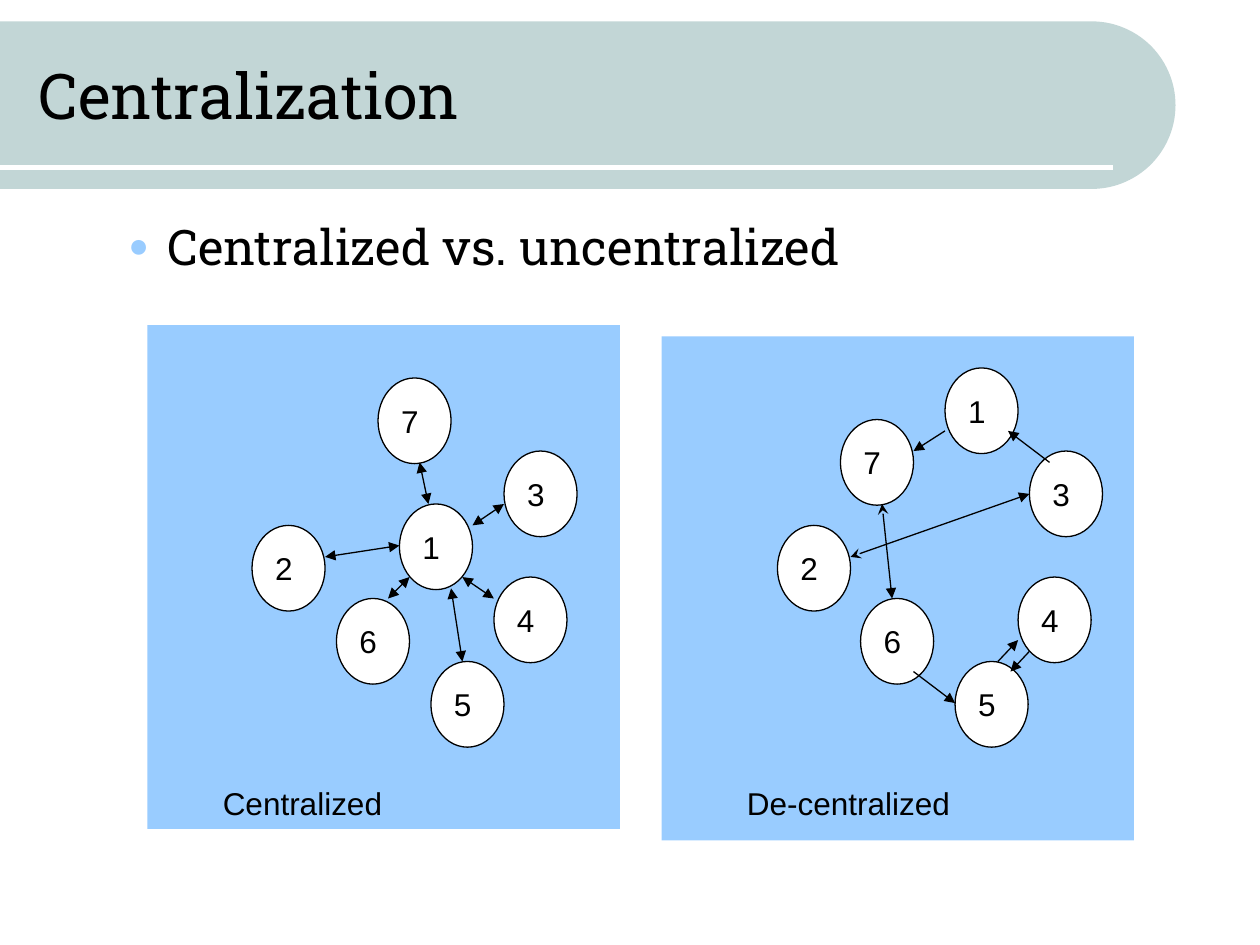
import math

from lxml import etree
from pptx import Presentation
from pptx.dml.color import RGBColor
from pptx.enum.shapes import MSO_CONNECTOR, MSO_SHAPE
from pptx.enum.text import MSO_ANCHOR, PP_ALIGN
from pptx.oxml.ns import qn
from pptx.util import Inches, Pt

RECTANGLE = MSO_SHAPE.RECTANGLE
OVAL = MSO_SHAPE.OVAL
STRAIGHT = MSO_CONNECTOR.STRAIGHT
LEFT = PP_ALIGN.LEFT
TOP, MIDDLE = MSO_ANCHOR.TOP, MSO_ANCHOR.MIDDLE

COLORS = {"band": "C2D6D6", "panel": "99CCFF", "white": "FFFFFF", "black": "000000"}
HEADING_FONT, LABEL_FONT = "Roboto Slab", "Arial"
NODE_SIZE = (0.58, 0.68)

# Arrows: start, end, head at the start, head at the end
BOTH = ("triangle", "triangle")
FORWARD = (None, "triangle")
MIXED = ("stealth", "triangle")

NETWORKS = [
    {
        "caption": "De-centralized",
        "caption_left": 5.83,
        "panel": (5.25, 2.67),
        "nodes": {"7": (6.67, 3.33), "1": (7.5, 2.92), "2": (6.17, 4.17), "3": (8.17, 3.58),
                  "4": (8.08, 4.58), "5": (7.58, 5.25), "6": (6.83, 4.75)},
        "arrows": [
            ((7.5, 3.42), (7.25, 3.58), FORWARD),
            ((7, 4), (7.08, 4.75), MIXED),
            ((7.25, 5.33), (7.58, 5.58), FORWARD),
            ((7.92, 5.25), (8.08, 5.08), FORWARD),
            ((8.17, 5.17), (8.02, 5.33), FORWARD),
            ((6.75, 4.42), (8.17, 3.92), MIXED),
            ((8.33, 3.67), (8, 3.42), FORWARD),
        ],
    },
    {
        "caption": "Centralized",
        "caption_left": 1.67,
        "panel": (1.17, 2.58),
        "nodes": {"7": (3, 3), "1": (3.17, 4), "2": (2, 4.17), "3": (4, 3.58),
                  "4": (3.92, 4.58), "5": (3.42, 5.25), "6": (2.67, 4.75)},
        "arrows": [
            ((3.33, 3.67), (3.4, 4), BOTH),
            ((3.08, 4.75), (3.25, 4.58), BOTH),
            ((3.67, 5.25), (3.58, 4.67), BOTH),
            ((3.92, 4.75), (3.67, 4.58), BOTH),
            ((2.58, 4.42), (3.17, 4.33), BOTH),
            ((4, 4), (3.75, 4.17), BOTH),
        ],
    },
]


def color(name):
    return RGBColor.from_string(COLORS[name])


def write_text(shape, text, font=LABEL_FONT, size=18, anchor=TOP):
    frame = shape.text_frame
    frame.word_wrap = True
    frame.vertical_anchor = anchor
    paragraph = frame.paragraphs[0]
    paragraph.alignment = LEFT
    run = paragraph.add_run()
    run.text = text
    run.font.name = font
    run.font.size = Pt(size)
    run.font.color.rgb = color("black")
    return paragraph


def add_bullet(paragraph, margin, indent):
    properties = paragraph._p.get_or_add_pPr()
    properties.set("marL", str(Inches(margin)))
    properties.set("indent", str(Inches(indent)))
    bullet_color = etree.SubElement(properties, qn("a:buClr"))
    etree.SubElement(bullet_color, qn("a:srgbClr"), val=COLORS["panel"])
    etree.SubElement(properties, qn("a:buSzPct"), val="70000")
    etree.SubElement(properties, qn("a:buFont"), typeface=LABEL_FONT)
    etree.SubElement(properties, qn("a:buChar"), char="●")


class SlideBuilder:
    def __init__(self, slide):
        self.slide = slide

    def style(self, shape, fill, line=None):
        shape.shadow.inherit = False
        shape.fill.solid()
        shape.fill.fore_color.rgb = color(fill)
        if line:
            shape.line.color.rgb = color(line)
            shape.line.width = Pt(0.75)
        else:
            shape.line.fill.background()

    def band(self, top, right, height):
        """Draw a band from the left edge with a half-round right end."""
        radius = height / 2
        center_x, center_y = right - radius, top + radius
        steps = 60
        angles = [math.pi * (step / steps - 0.5) for step in range(steps + 1)]
        points = [(Inches(center_x + radius * math.cos(angle)),
                   Inches(center_y + radius * math.sin(angle))) for angle in angles]
        builder = self.slide.shapes.build_freeform(0, Inches(top))
        builder.add_line_segments(points + [(0, Inches(top + height))], close=True)
        self.style(builder.convert_to_shape(), "band")

    def shape(self, kind, position, size, fill, line=None):
        shape = self.slide.shapes.add_shape(kind, *map(Inches, position + size))
        self.style(shape, fill, line)
        return shape

    def node(self, label, position):
        shape = self.shape(OVAL, position, NODE_SIZE, "white", "black")
        write_text(shape, label, anchor=MIDDLE)

    def text(self, box, text, **text_format):
        shape = self.slide.shapes.add_textbox(*map(Inches, box))
        return write_text(shape, text, **text_format)

    def line(self, start, end, line_color="black", width=0.75, heads=(None, None)):
        connector = self.slide.shapes.add_connector(STRAIGHT, *map(Inches, start + end))
        connector.line.color.rgb = color(line_color)
        connector.line.width = Pt(width)
        outline = connector.line._get_or_add_ln()
        for tag, head in zip(("a:headEnd", "a:tailEnd"), heads):
            if head:
                etree.SubElement(outline, qn(tag), type=head)
        etree.SubElement(connector._element.spPr, qn("a:effectLst"))

    def network(self, network):
        self.shape(RECTANGLE, network["panel"], (3.75, 4), "panel")
        for label, position in network["nodes"].items():
            self.node(label, position)
        for start, end, heads in network["arrows"]:
            self.line(start, end, heads=heads)
        self.text((network["caption_left"], 6.17, 2.67, 0.5), network["caption"])


def main():
    presentation = Presentation()
    presentation.slide_width = Inches(10)
    presentation.slide_height = Inches(7.5)
    builder = SlideBuilder(presentation.slides.add_slide(presentation.slide_layouts[6]))

    builder.band(top=0.17, right=9.33, height=1.33)
    builder.line((0, 1.33), (8.83, 1.33), line_color="white", width=3)
    builder.text((0.21, 0.25, 8.77, 1), "Centralization",
                 font=HEADING_FONT, size=36, anchor=MIDDLE)
    topic = builder.text((0.42, 1.67, 8.42, 1.25), "Centralized vs. uncentralized",
                         font=HEADING_FONT, size=28)
    add_bullet(topic, margin=0.81, indent=-0.31)
    for network in NETWORKS:
        builder.network(network)

    presentation.save("out.pptx")


if __name__ == "__main__":
    main()
